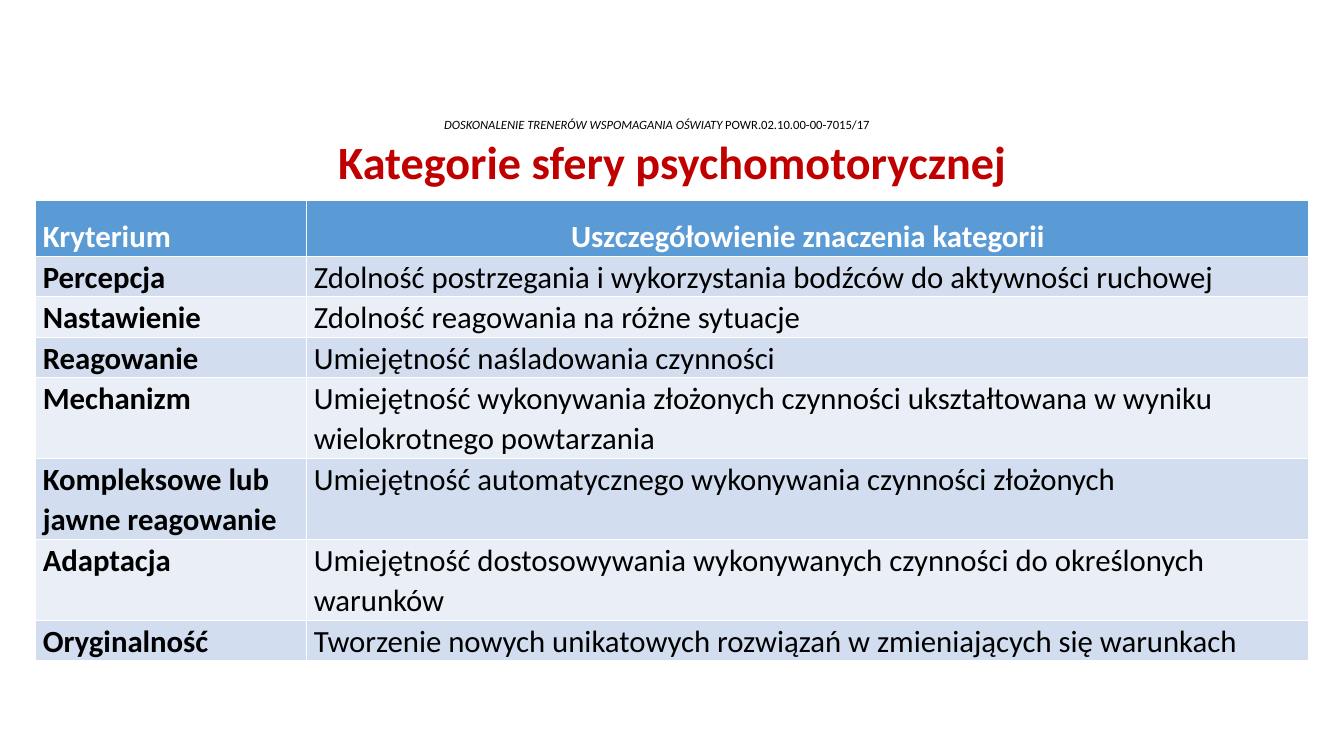
import pptx
import pptx.util
import pptx.dml.color
import pptx.enum.text

Cm = pptx.util.Cm
Pt = pptx.util.Pt
ALIGN = pptx.enum.text.PP_ALIGN
ANCHOR = pptx.enum.text.MSO_ANCHOR

HEADER = ("Kryterium", "Uszczegółowienie znaczenia kategorii")
CATEGORIES = [
    ("Percepcja", "Zdolność postrzegania i wykorzystania bodźców do aktywności ruchowej", 1),
    ("Nastawienie", "Zdolność reagowania na różne sytuacje", 1),
    ("Reagowanie", "Umiejętność naśladowania czynności", 1),
    ("Mechanizm", "Umiejętność wykonywania złożonych czynności ukształtowana w wyniku "
     "wielokrotnego powtarzania", 2),
    ("Kompleksowe lub jawne reagowanie",
     "Umiejętność automatycznego wykonywania czynności złożonych", 2),
    ("Adaptacja", "Umiejętność dostosowywania wykonywanych czynności do określonych warunków", 2),
    ("Oryginalność", "Tworzenie nowych unikatowych rozwiązań w zmieniających się warunkach", 1),
]
BANDS = ("D2DEEF", "EAEFF7")
HEADER_HEIGHT = 1.4
LINE_HEIGHT = 1.02


def rgb(value):
    return pptx.dml.color.RGBColor.from_string(value)


def set_all(obj, **values):
    for name, value in values.items():
        setattr(obj, name, value)


def add_run(p, text, size, color, **font):
    r = p.add_run()
    r.text = text
    set_all(r.font, name="Calibri", size=Pt(size), **font)
    r.font.color.rgb = rgb(color)


def set_frame(tf):
    set_all(tf, word_wrap=True, auto_size=pptx.enum.text.MSO_AUTO_SIZE.NONE,
            vertical_anchor=ANCHOR.MIDDLE, margin_top=0, margin_bottom=0)
    p = tf.paragraphs[0]
    set_all(p, alignment=ALIGN.CENTER, line_spacing=0.9)
    return p


def add_project_line(s, left, top, width, height):
    sp = s.shapes.add_textbox(Cm(left), Cm(top), Cm(width), Cm(height))
    p = set_frame(sp.text_frame)
    add_run(p, "DOSKONALENIE TRENERÓW WSPOMAGANIA OŚWIATY ", 9, "000000", italic=True)
    add_run(p, "POWR.02.10.00-00-7015/17", 9, "000000", italic=False)


def add_title(s, left, top, width, height):
    sp = s.shapes.title
    set_all(sp, left=Cm(left), top=Cm(top), width=Cm(width), height=Cm(height))
    p = set_frame(sp.text_frame)
    add_run(p, "Kategorie sfery psychomotorycznej", 33, "C00000", bold=True)


def fill_cell(cell, text, fill, color, bold, alignment, spacing):
    set_all(cell, margin_left=Cm(0.18), margin_right=Cm(0.18), margin_top=0, margin_bottom=0)
    cell.fill.solid()
    cell.fill.fore_color.rgb = rgb(fill)
    p = cell.text_frame.paragraphs[0]
    set_all(p, alignment=alignment, line_spacing=spacing)
    add_run(p, text, 22, color, bold=bold)


def add_category_table(s, left, top, width, first_width):
    heights = [HEADER_HEIGHT] + [LINE_HEIGHT * lines for _, _, lines in CATEGORIES]
    table = s.shapes.add_table(len(heights), 2, Cm(left), Cm(top),
                               Cm(width), Cm(sum(heights))).table
    table.columns[0].width = Cm(first_width)
    table.columns[1].width = Cm(width - first_width)
    for row, height in zip(table.rows, heights):
        row.height = Cm(height)
    for col, (text, alignment) in enumerate(zip(HEADER, (ALIGN.LEFT, ALIGN.CENTER))):
        fill_cell(table.cell(0, col), text, "5B9BD5", "FFFFFF", True, alignment, 1.5)
    for i, (name, meaning, _) in enumerate(CATEGORIES):
        for col, text in enumerate((name, meaning)):
            fill_cell(table.cell(i + 1, col), text, BANDS[i % 2], "000000",
                      col == 0, ALIGN.LEFT, 1.07)


def main():
    prs = pptx.Presentation()
    set_all(prs, slide_width=Cm(33.87), slide_height=Cm(19.05))
    s = prs.slides.add_slide(prs.slide_layouts[5])
    add_project_line(s, 2, 2.9, 29.11, 0.5)
    add_title(s, 2.34, 3.38, 29.21, 1.55)
    add_category_table(s, 0.9, 5.04, 32.08, 6.83)
    prs.save("out.pptx")


if __name__ == "__main__":
    main()
